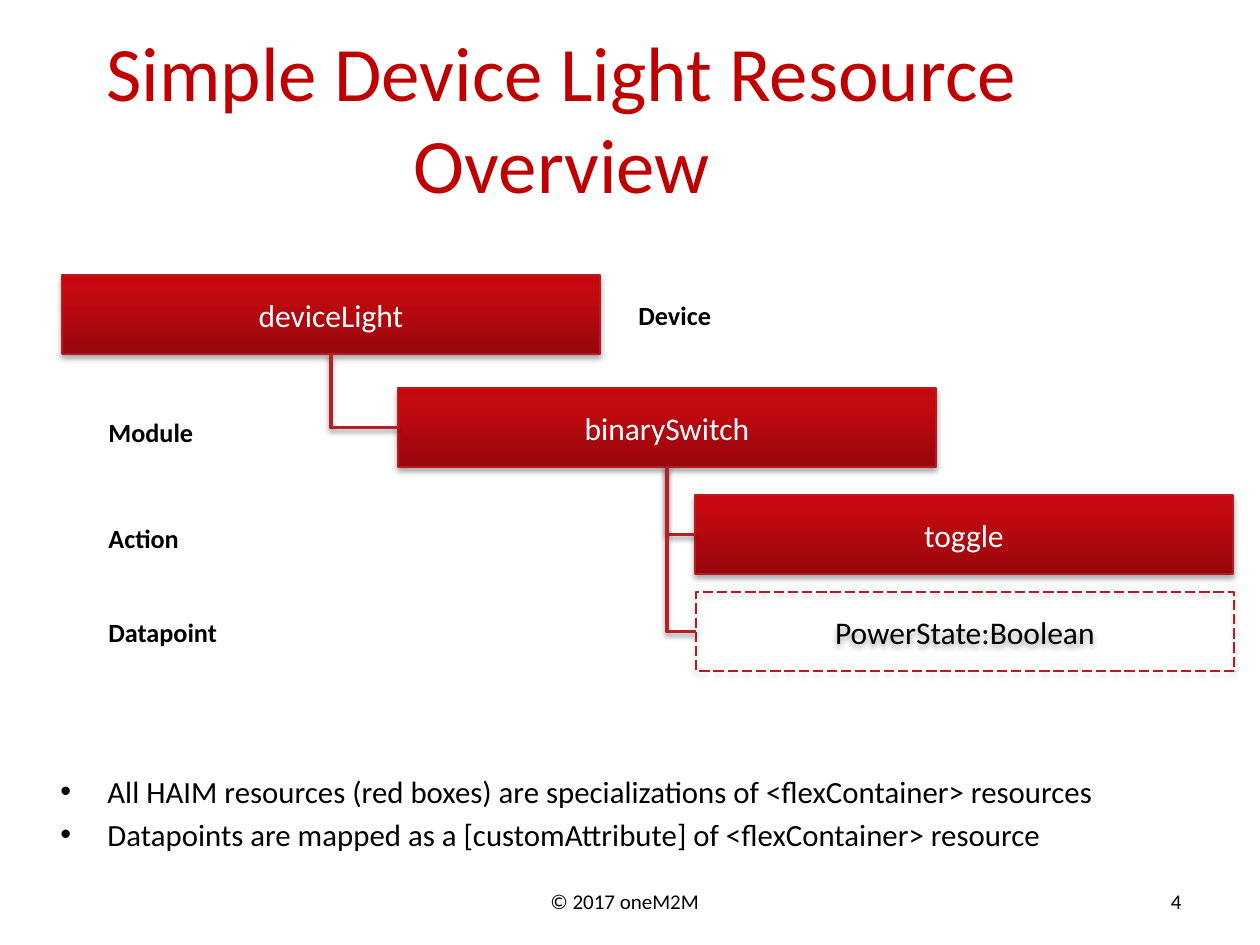
"""Build the resource tree slide for a simple light device."""
from dataclasses import dataclass
from typing import Optional

from lxml import etree
from pptx import Presentation
from pptx import util as u
from pptx.dml.color import RGBColor
from pptx.enum import dml, shapes, text
from pptx.oxml import ns

BOX_WIDTH, BOX_HEIGHT = 538, 79
LABEL_WIDTH, LABEL_HEIGHT = 243, 44
BULLET_INDENT = 47


@dataclass(frozen=True)
class Theme:
    font: str = "Calibri"
    title: str = "C00000"
    ink: str = "000000"
    paper: str = "FFFFFF"
    border: str = "B41C21"
    link: str = "B42025"
    gradient: tuple = ((0, "97070C"), (80, "C40910"), (100, "C8060D"))
    title_size: float = 44
    box_size: float = 18
    bullet_size: float = 17.6
    label_size: float = 15
    footer_size: float = 12


@dataclass(frozen=True)
class Resource:
    name: str
    left: int
    top: int
    parent: Optional[str] = None
    is_attribute: bool = False


@dataclass(frozen=True)
class Label:
    words: str
    left: int
    top: int


THEME = Theme()
RESOURCES = (
    Resource("deviceLight", 62, 275),
    Resource("binarySwitch", 398, 388, "deviceLight"),
    Resource("toggle", 695, 495, "binarySwitch"),
    Resource("PowerState:Boolean", 696, 592, "binarySwitch", True),
)
LABELS = (
    Label("Device", 626, 293),
    Label("Module", 96, 410),
    Label("Action", 96, 516),
    Label("Datapoint", 96, 610),
)
BULLETS = (
    "All HAIM resources (red boxes) are specializations of <flexContainer> resources",
    "Datapoints are mapped as a [customAttribute] of <flexContainer> resource",
)


def px(length: float) -> u.Emu:
    return u.Emu(round(length * 914400 / 126))


def style(frame, size: float, color: str, align=text.PP_ALIGN.LEFT, bold=False) -> None:
    for paragraph in frame.paragraphs:
        paragraph.alignment = align
        for run in paragraph.runs:
            run.font.name = THEME.font
            run.font.size = u.Pt(size)
            run.font.bold = bold
            run.font.color.rgb = RGBColor.from_string(color)


def add_text(slide, words: str, left: int, top: int, width: int, height: int,
             size: float, align=text.PP_ALIGN.LEFT, bold=False, wrap=True):
    frame = slide.shapes.add_textbox(px(left), px(top), px(width), px(height)).text_frame
    frame.word_wrap = wrap
    frame.text = words
    style(frame, size, THEME.ink, align, bold)
    return frame


def add_shadow(shape, alpha: int, distance: float) -> None:
    effects = etree.SubElement(shape._element.spPr, ns.qn("a:effectLst"))
    shadow = etree.SubElement(effects, ns.qn("a:outerShdw"), blurRad=str(u.Pt(3.1)),
                              dist=str(u.Pt(distance)), dir="5400000", rotWithShape="0")
    color = etree.SubElement(shadow, ns.qn("a:srgbClr"), val=THEME.ink)
    etree.SubElement(color, ns.qn("a:alpha"), val=str(alpha * 1000))


def fill_gradient(shape) -> None:
    shape.fill.gradient()
    shape.fill.gradient_angle = 90
    stops = shape._element.spPr.find(".//" + ns.qn("a:gsLst"))
    for stop in list(stops):
        stops.remove(stop)
    for position, color in THEME.gradient:
        stop = etree.SubElement(stops, ns.qn("a:gs"), pos=str(position * 1000))
        etree.SubElement(stop, ns.qn("a:srgbClr"), val=color)


def add_resource(slide, resource: Resource):
    box = slide.shapes.add_shape(shapes.MSO_SHAPE.RECTANGLE, px(resource.left),
                                 px(resource.top), px(BOX_WIDTH), px(BOX_HEIGHT))
    box.line.color.rgb = RGBColor.from_string(THEME.border)
    box.line.width = u.Pt(0.75)
    if resource.is_attribute:
        box.fill.background()
        box.line.dash_style = dml.MSO_LINE.LONG_DASH
    else:
        fill_gradient(box)
    add_shadow(box, 35, 1.8)
    box.text_frame.text = resource.name
    box.text_frame.vertical_anchor = text.MSO_ANCHOR.MIDDLE
    style(box.text_frame, THEME.box_size,
          THEME.ink if resource.is_attribute else THEME.paper, text.PP_ALIGN.CENTER)
    return box


def link(slide, parent, child) -> None:
    """Draw an elbow from the parent's bottom centre to the child's left side."""
    start_x, start_y = parent.left + parent.width // 2, parent.top + parent.height
    end_x, end_y = child.left, child.top + child.height // 2
    elbow = slide.shapes.add_connector(shapes.MSO_CONNECTOR.ELBOW,
                                       start_x, start_y, end_x, end_y)
    elbow.begin_connect(parent, 2)
    elbow.end_connect(child, 1)
    run, drop = end_x - start_x, end_y - start_y
    elbow.left = start_x + (run - drop) // 2
    elbow.top = start_y + (drop - run) // 2
    elbow.width, elbow.height = drop, run
    properties = elbow._element.spPr
    properties.find(ns.qn("a:prstGeom")).set("prst", "bentConnector2")
    transform = properties.find(ns.qn("a:xfrm"))
    transform.set("rot", "16200000")
    transform.set("flipH", "1")
    elbow.line.color.rgb = RGBColor.from_string(THEME.link)
    elbow.line.width = u.Pt(2)
    add_shadow(elbow, 38, 1.6)


def add_bullets(slide) -> None:
    frame = add_text(slide, "\n".join(BULLETS), 48, 766, 1166, 95, THEME.bullet_size)
    for index, paragraph in enumerate(frame.paragraphs):
        properties = paragraph._p.get_or_add_pPr()
        properties.set("marL", str(px(BULLET_INDENT)))
        properties.set("indent", str(-px(BULLET_INDENT)))
        etree.SubElement(properties, ns.qn("a:buFont"), typeface="Arial")
        etree.SubElement(properties, ns.qn("a:buChar"), char="•")
        if index:
            paragraph.space_before = u.Pt(3.5)


def main() -> None:
    deck = Presentation()
    deck.slide_width, deck.slide_height = px(1260), px(945)
    slide = deck.slides.add_slide(deck.slide_layouts[5])

    title = slide.shapes.title
    title.left, title.top, title.width, title.height = px(63), px(38), px(998), px(158)
    title.text_frame.text = "Simple Device Light Resource Overview"
    title.text_frame.auto_size = text.MSO_AUTO_SIZE.NONE
    title.text_frame.vertical_anchor = text.MSO_ANCHOR.MIDDLE
    style(title.text_frame, THEME.title_size, THEME.title, text.PP_ALIGN.CENTER)

    boxes = {}
    for resource in RESOURCES:
        boxes[resource.name] = add_resource(slide, resource)
        if resource.parent:
            link(slide, boxes[resource.parent], boxes[resource.name])
    for label in LABELS:
        add_text(slide, label.words, label.left, label.top, LABEL_WIDTH, LABEL_HEIGHT,
                 THEME.label_size, bold=True)
    add_bullets(slide)
    add_text(slide, "© 2017 oneM2M", 538, 882, 176, 38, THEME.footer_size, wrap=False)
    add_text(slide, "4", 1144, 882, 50, 38, THEME.footer_size,
             text.PP_ALIGN.RIGHT, wrap=False)
    deck.save("out.pptx")


if __name__ == "__main__":
    main()
